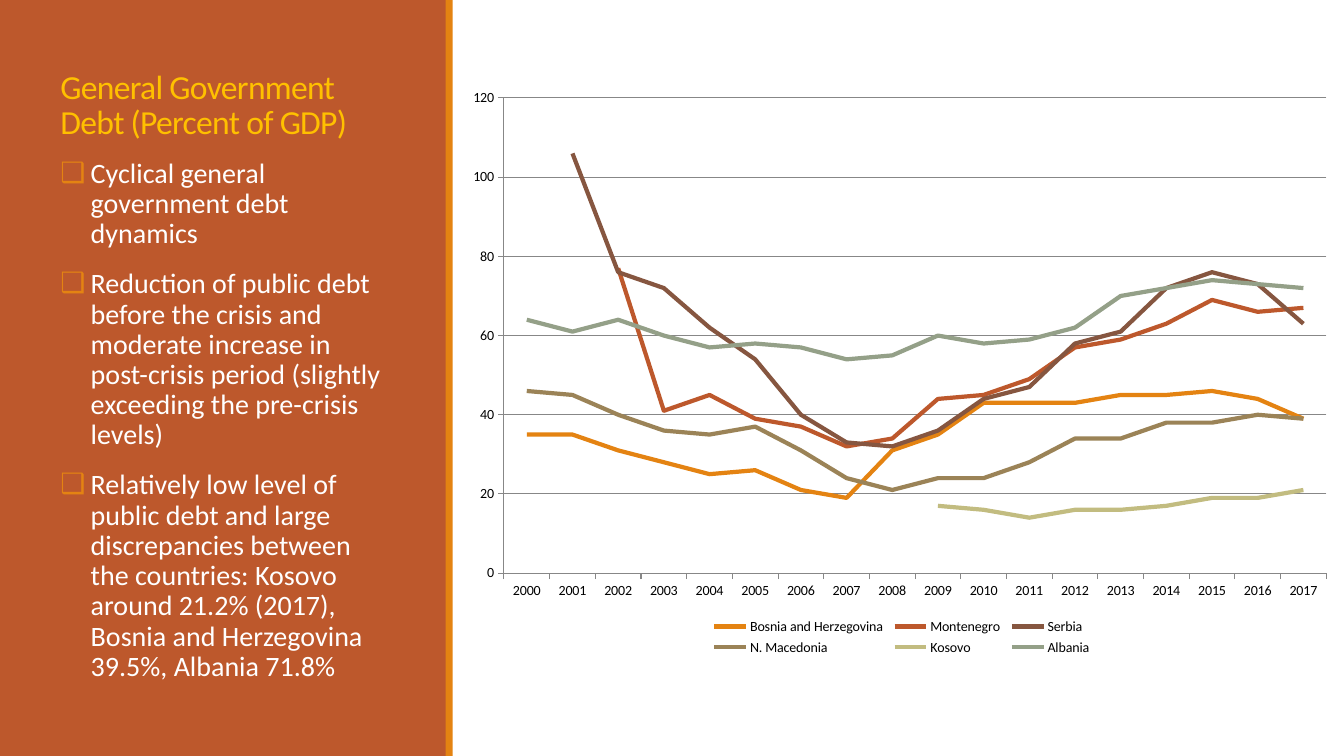
from lxml import etree
from pptx import Presentation
from pptx.chart.data import CategoryChartData
from pptx.dml.color import RGBColor
from pptx.enum.chart import XL_CHART_TYPE, XL_LEGEND_POSITION, XL_TICK_MARK
from pptx.enum.shapes import MSO_SHAPE
from pptx.enum.text import MSO_ANCHOR, MSO_AUTO_SIZE, PP_ALIGN
from pptx.oxml.ns import qn
from pptx.util import Pt

RECTANGLE = MSO_SHAPE.RECTANGLE
LINE = XL_CHART_TYPE.LINE
BOTTOM = XL_LEGEND_POSITION.BOTTOM
OUTSIDE = XL_TICK_MARK.OUTSIDE
ANCHOR_TOP, ANCHOR_BOTTOM = MSO_ANCHOR.TOP, MSO_ANCHOR.BOTTOM
NO_AUTOFIT = MSO_AUTO_SIZE.NONE
LEFT = PP_ALIGN.LEFT

EMU_PER_PX = 9144
FONT = "Calibri"
RUST, ORANGE, GOLD = "BD582C", "E48312", "FFC000"
WHITE, BLACK, GRAY = "FFFFFF", "000000", "878787"

TITLE = "General Government Debt (Percent of GDP)"
POINTS = [
    "Cyclical general government debt dynamics",
    "Reduction of public debt before the crisis and moderate increase in "
    "post-crisis period (slightly exceeding the pre-crisis levels)",
    "Relatively low level of public debt and large discrepancies between "
    "the countries: Kosovo around 21.2% (2017), Bosnia and Herzegovina "
    "39.5%, Albania 71.8%",
]
YEARS = [str(year) for year in range(2000, 2018)]
DEBT = [
    ("Bosnia and Herzegovina", ORANGE,
     [35, 35, 31, 28, 25, 26, 21, 19, 31, 35, 43, 43, 43, 45, 45, 46, 44, 39]),
    ("Montenegro", RUST,
     [77, 41, 45, 39, 37, 32, 34, 44, 45, 49, 57, 59, 63, 69, 66, 67]),
    ("Serbia", "865640",
     [106, 76, 72, 62, 54, 40, 33, 32, 36, 44, 47, 58, 61, 72, 76, 73, 63]),
    ("N. Macedonia", "9B8357",
     [46, 45, 40, 36, 35, 37, 31, 24, 21, 24, 24, 28, 34, 34, 38, 38, 40, 39]),
    ("Kosovo", "C2BC80", [17, 16, 14, 16, 16, 17, 19, 19, 21]),
    ("Albania", "94A088",
     [64, 61, 64, 60, 57, 58, 57, 54, 55, 60, 58, 59, 62, 70, 72, 74, 73, 72]),
]


def px(length):
    return length * EMU_PER_PX


def color(value):
    return RGBColor.from_string(value)


def manual_layout(x, y, width, height, inner=False):
    layout = etree.Element(qn("c:layout"))
    manual = etree.SubElement(layout, qn("c:manualLayout"))
    settings = [("layoutTarget", "inner")] if inner else []
    settings += [("xMode", "edge"), ("yMode", "edge"),
                 ("x", x), ("y", y), ("w", width), ("h", height)]
    for name, value in settings:
        etree.SubElement(manual, qn("c:" + name)).set("val", str(value))
    return layout


class DebtSlide:
    def __init__(self, presentation):
        self.slide = presentation.slides.add_slide(presentation.slide_layouts[1])

    def back_band(self, left, width, fill):
        shape = self.slide.shapes.add_shape(
            RECTANGLE, px(left), 0, px(width), px(750))
        shape.shadow.inherit = False
        shape.fill.solid()
        shape.fill.fore_color.rgb = color(fill)
        shape.line.fill.background()
        shape.element.getparent().insert(2, shape.element)

    def place_text(self, placeholder, top, height, anchor):
        placeholder.left, placeholder.top = px(50), px(top)
        placeholder.width, placeholder.height = px(350), px(height)
        frame = placeholder.text_frame
        frame.word_wrap = True
        frame.auto_size = NO_AUTOFIT
        frame.vertical_anchor = anchor
        frame.margin_left = frame.margin_right = px(10)
        frame.margin_top = frame.margin_bottom = px(5)
        return frame

    def add_text(self, paragraph, text, size, fill, spacing):
        paragraph.alignment = LEFT
        paragraph.line_spacing = spacing
        run = paragraph.add_run()
        run.text = text
        run.font.name = FONT
        run.font.size = Pt(size)
        run.font.color.rgb = color(fill)
        return run

    def title(self, text):
        frame = self.place_text(self.slide.shapes.title, 65, 80, ANCHOR_BOTTOM)
        run = self.add_text(frame.paragraphs[0], text, 24, GOLD, 0.85)
        run.font._element.set("spc", "-50")

    def bullets(self, points):
        frame = self.place_text(self.slide.placeholders[1], 153, 537, ANCHOR_TOP)
        for index, point in enumerate(points):
            paragraph = frame.add_paragraph() if index else frame.paragraphs[0]
            self.add_text(paragraph, point, 20, WHITE, 0.9)
            paragraph.space_before, paragraph.space_after = Pt(12), Pt(2)
            properties = paragraph._p.get_or_add_pPr()
            properties.set("marL", str(px(30)))
            properties.set("indent", str(px(-30)))
            bullet_color = etree.SubElement(properties, qn("a:buClr"))
            etree.SubElement(bullet_color, qn("a:srgbClr")).set("val", ORANGE)
            etree.SubElement(properties, qn("a:buFont")).set("typeface", FONT)
            etree.SubElement(properties, qn("a:buChar")).set("char", "❑")

    def line_chart(self, years, countries):
        data = CategoryChartData()
        data.categories = years
        for name, _, values in countries:
            data.add_series(name, [None] * (len(years) - len(values)) + values)
        chart = self.slide.shapes.add_chart(
            LINE, px(456), px(80), px(877), px(575), data).chart
        chart.has_title = False
        chart.font.name = FONT
        chart.font.size = Pt(10)
        chart.font.color.rgb = color(BLACK)
        chart.plots[0].vary_by_categories = False
        for series, (_, stroke, _) in zip(chart.plots[0].series, countries):
            series.smooth = False
            series.format.line.width = Pt(3)
            series.format.line.color.rgb = color(stroke)
        self.axes(chart)
        self.arrange(chart)

    def axes(self, chart):
        value_axis = chart.value_axis
        value_axis.minimum_scale, value_axis.maximum_scale = 0, 120
        value_axis.major_unit = 20
        value_axis.has_major_gridlines = True
        lines = [value_axis.major_gridlines.format.line]
        for axis in (chart.category_axis, value_axis):
            axis.major_tick_mark = OUTSIDE
            lines.append(axis.format.line)
        for line in lines:
            line.width = Pt(0.75)
            line.color.rgb = color(GRAY)

    def arrange(self, chart):
        chart.has_legend = True
        chart.legend.position = BOTTOM
        chart.legend.include_in_layout = False
        legend = chart.legend._element
        for layout in legend.findall(qn("c:layout")):
            legend.remove(layout)
        legend.find(qn("c:legendPos")).addnext(
            manual_layout(0.28, 0.92, 0.44, 0.08))
        plot_area = chart.plots[0]._element.getparent()
        for layout in plot_area.findall(qn("c:layout")):
            plot_area.remove(layout)
        plot_area.insert(0, manual_layout(0.05, 0.03, 0.93, 0.82, True))


def main():
    presentation = Presentation()
    presentation.slide_width, presentation.slide_height = px(1333), px(750)
    debt_slide = DebtSlide(presentation)
    debt_slide.back_band(442, 7, ORANGE)
    debt_slide.back_band(0, 443, RUST)
    debt_slide.title(TITLE)
    debt_slide.bullets(POINTS)
    debt_slide.line_chart(YEARS, DEBT)
    presentation.save("out.pptx")


if __name__ == "__main__":
    main()
